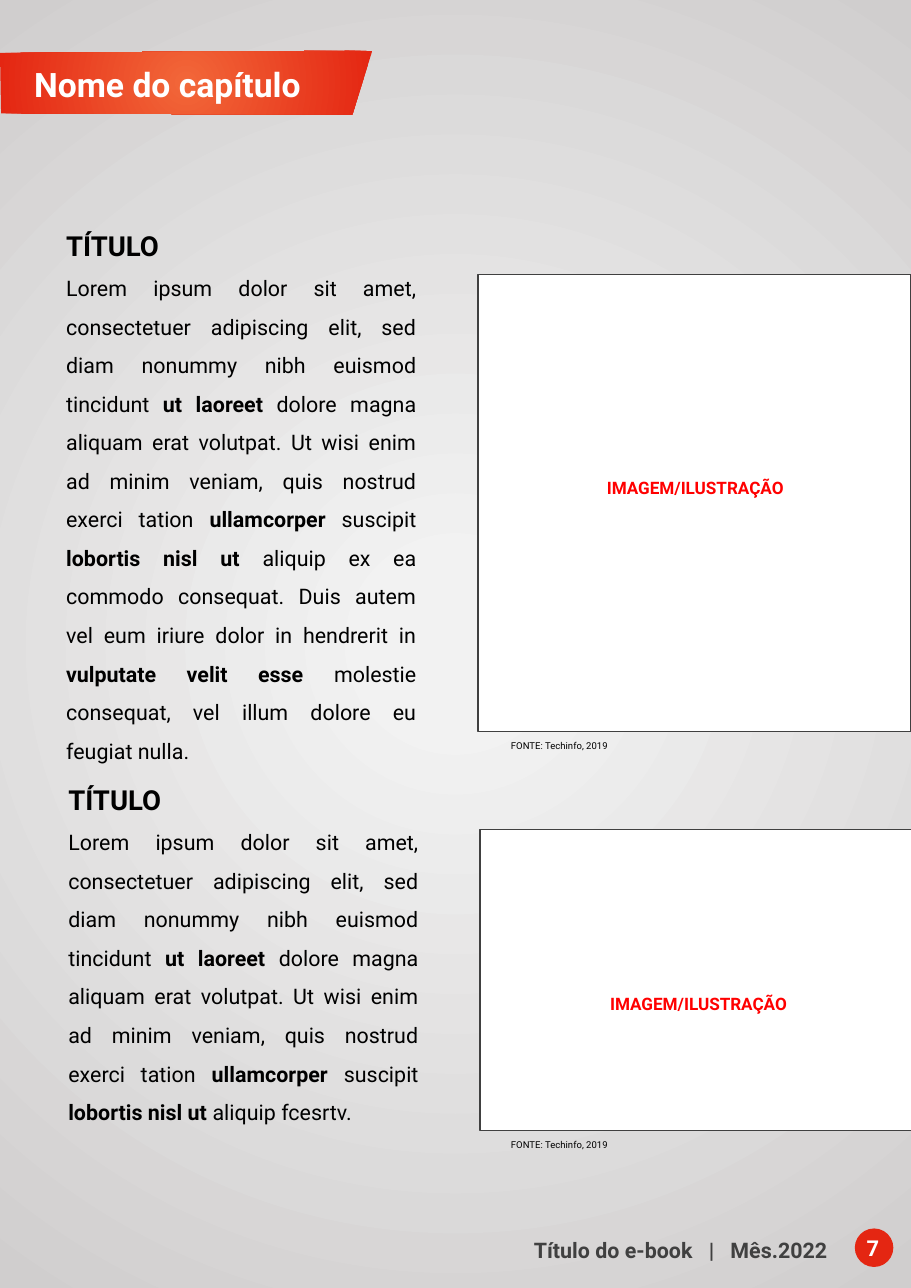
from dataclasses import dataclass
from typing import Optional

import pptx
import pptx.dml.color
import pptx.enum.shapes
import pptx.enum.text
import pptx.oxml
import pptx.oxml.ns
import pptx.util
from pptx.enum.text import PP_ALIGN

FONT = "Roboto"
COLORS = {
    "white": "FFFFFF", "black": "000000", "gray": "404040", "red": "E42612",
    "orange": "F26739", "label": "FF0000", "light": "F2F2F2", "dark": "D0CECE",
}
PAGE_WIDTH = pptx.util.Inches(8.27)
PAGE_HEIGHT = pptx.util.Inches(11.69)


@dataclass(frozen=True)
class Area:
    """A rectangle in percent of the slide's width and height."""
    left: float
    top: float
    width: float
    height: float

    def emu(self) -> tuple[int, int, int, int]:
        return (across(self.left), down(self.top), across(self.width), down(self.height))


@dataclass(frozen=True)
class Style:
    size: float
    color: str
    bold: Optional[bool] = None
    align: PP_ALIGN = PP_ALIGN.LEFT
    spacing: float = 1.0


@dataclass(frozen=True)
class Section:
    body: Area
    frame: Area
    label: Area
    source: Area
    ending: list[str]


def across(percent: float) -> int:
    return round(PAGE_WIDTH * percent / 100)


def down(percent: float) -> int:
    return round(PAGE_HEIGHT * percent / 100)


def rgb(name: str) -> pptx.dml.color.RGBColor:
    return pptx.dml.color.RGBColor.from_string(COLORS[name])


def style_paragraph(para, style: Style) -> None:
    para.alignment = style.align
    para.line_spacing = style.spacing
    para.space_before = pptx.util.Pt(0)
    para.font.name = FONT
    para.font.size = pptx.util.Pt(style.size)
    para.font.bold = style.bold
    para.font.color.rgb = rgb(style.color)


def prepare_frame(box):
    frame = box.text_frame
    frame.word_wrap = True
    frame.auto_size = pptx.enum.text.MSO_AUTO_SIZE.SHAPE_TO_FIT_TEXT
    frame.vertical_anchor = pptx.enum.text.MSO_ANCHOR.TOP
    return frame


def place(box, area: Area) -> None:
    box.left, box.top, box.width, box.height = area.emu()


def add_text(page, area: Area, text: str, style: Style):
    box = page.shapes.add_textbox(*area.emu())
    para = prepare_frame(box).paragraphs[0]
    para.text = text
    style_paragraph(para, style)
    return box


def add_preset(page, kind, area: Area, color: str):
    shape = page.shapes.add_shape(kind, *area.emu())
    shape.shadow.inherit = False
    shape.fill.solid()
    shape.fill.fore_color.rgb = rgb(color)
    shape.line.fill.background()
    return shape


def fill_radial(shape, center: str, center_stop: float, edge: str) -> None:
    shape.fill.gradient()
    stops = shape.fill.gradient_stops
    for stop, position, color in zip(stops, (center_stop, 1), (center, edge)):
        stop.position = position
        stop.color.rgb = rgb(color)
    linear = shape._element.spPr.find(".//" + pptx.oxml.ns.qn("a:lin"))
    circle = pptx.oxml.parse_xml(
        f'<a:path {pptx.oxml.ns.nsdecls("a")} path="circle">'
        '<a:fillToRect l="50000" t="50000" r="50000" b="50000"/></a:path>')
    linear.getparent().replace(linear, circle)


def send_to_back(page, shape) -> None:
    page.shapes._spTree.insert(2, shape._element)


def remove_bullet(para) -> None:
    properties = para._p.get_or_add_pPr()
    properties.set("marL", "0")
    properties.set("indent", "0")
    properties.append(pptx.oxml.parse_xml(f'<a:buNone {pptx.oxml.ns.nsdecls("a")}/>'))


def fill_body(box, area: Area, spans: list[str]) -> None:
    """Write the heading, then spans that alternate regular and bold."""
    place(box, area)
    frame = prepare_frame(box)
    heading, para = frame.paragraphs[0], frame.add_paragraph()
    heading.text = "TÍTULO"
    for index, text in enumerate(spans):
        span = para.add_run()
        span.text = text
        span.font.bold = index % 2 == 1
    for item, style in ((heading, HEADING), (para, BODY)):
        remove_bullet(item)
        style_paragraph(item, style)


TITLE = Style(22, "white", True)
HEADING = Style(18, "black", True, PP_ALIGN.JUSTIFY, 1.5)
BODY = Style(14, "black", None, PP_ALIGN.JUSTIFY, 1.5)
LABEL = Style(11.2, "label", True)
SOURCE = Style(6.2, "black")
FOOTER = Style(14, "gray", True, PP_ALIGN.RIGHT)
NUMBER = Style(14.3, "white", True)

OPENING = [
    "Lorem ipsum dolor sit amet, consectetuer adipiscing elit, sed diam nonummy "
    "nibh euismod tincidunt ", "ut laoreet ",
    "dolore magna aliquam erat volutpat. Ut wisi enim ad minim veniam, quis nostrud "
    "exerci tation ", "ullamcorper ", "suscipit ", "lobortis nisl ut ",
]
SECTIONS = [
    Section(Area(6.05, 16.08, 40.87, 40.72), Area(52.48, 21.3, 47.52, 35.5),
            Area(65.42, 36.61, 22.97, 2.48), Area(54.9, 57.06, 31.92, 1.8),
            ["aliquip ex ea commodo consequat. Duis autem vel eum iriure dolor in hendrerit in ",
             "vulputate velit esse ", "molestie consequat, vel illum dolore eu feugiat nulla."]),
    Section(Area(6.29, 59.11, 40.87, 28.57), Area(52.72, 64.41, 47.52, 23.35),
            Area(65.78, 76.73, 22.97, 2.48), Area(54.9, 88.02, 31.92, 1.8),
            ["aliquip fcesrtv."]),
]
BANNER = [(0, 4.11), (40.87, 3.93), (38.69, 8.9), (0.12, 8.81)]
FOOTER_SPANS = [("Título do e-book", 0), (" ", 700), ("|", 0), (" ", 700), ("Mês.2022", 0)]


def main() -> None:
    deck = pptx.Presentation()
    deck.slide_width, deck.slide_height = PAGE_WIDTH, PAGE_HEIGHT
    page = deck.slides.add_slide(deck.slide_layouts[3])
    title, *bodies = page.placeholders
    presets = pptx.enum.shapes.MSO_SHAPE

    # Chapter banner and page background, behind the placeholders
    corners = [(across(x), down(y)) for x, y in BANNER]
    builder = page.shapes.build_freeform(*corners[0])
    builder.add_line_segments(corners[1:], close=True)
    banner = builder.convert_to_shape()
    banner.shadow.inherit = False
    banner.line.fill.background()
    fill_radial(banner, "orange", 0, "red")
    send_to_back(page, banner)
    background = add_preset(page, presets.RECTANGLE, Area(0, 0, 100, 100), "light")
    fill_radial(background, "light", 0.09, "dark")
    send_to_back(page, background)

    # Chapter title
    place(title, Area(2.54, 4.53, 32.41, 4.02))
    heading = prepare_frame(title).paragraphs[0]
    heading.text = "Nome do capítulo"
    style_paragraph(heading, TITLE)

    # Sections: text on the left, illustration frame on the right
    for section, body in zip(SECTIONS, bodies):
        fill_body(body, section.body, OPENING + section.ending)
        frame = add_preset(page, presets.RECTANGLE, section.frame, "white")
        frame.line.color.rgb = rgb("gray")
        frame.line.width = pptx.util.Pt(1)
        add_text(page, section.label, "IMAGEM/ILUSTRAÇÃO", LABEL)
        add_text(page, section.source, "FONTE: Techinfo, 2019", SOURCE)

    # Footer and page number
    footer = add_text(page, Area(43.89, 95.64, 49.94, 2.91), "", FOOTER)
    footer.text_frame.margin_right = across(3)
    for text, tracking in FOOTER_SPANS:
        span = footer.text_frame.paragraphs[0].add_run()
        span.text = text
        if tracking:
            span._r.get_or_add_rPr().set("spc", str(tracking))
    add_preset(page, presets.OVAL, Area(93.83, 95.38, 4.23, 2.99), "red")
    add_text(page, Area(93.95, 95.47, 4.23, 2.91), "7", NUMBER)

    deck.save("out.pptx")


if __name__ == "__main__":
    main()
